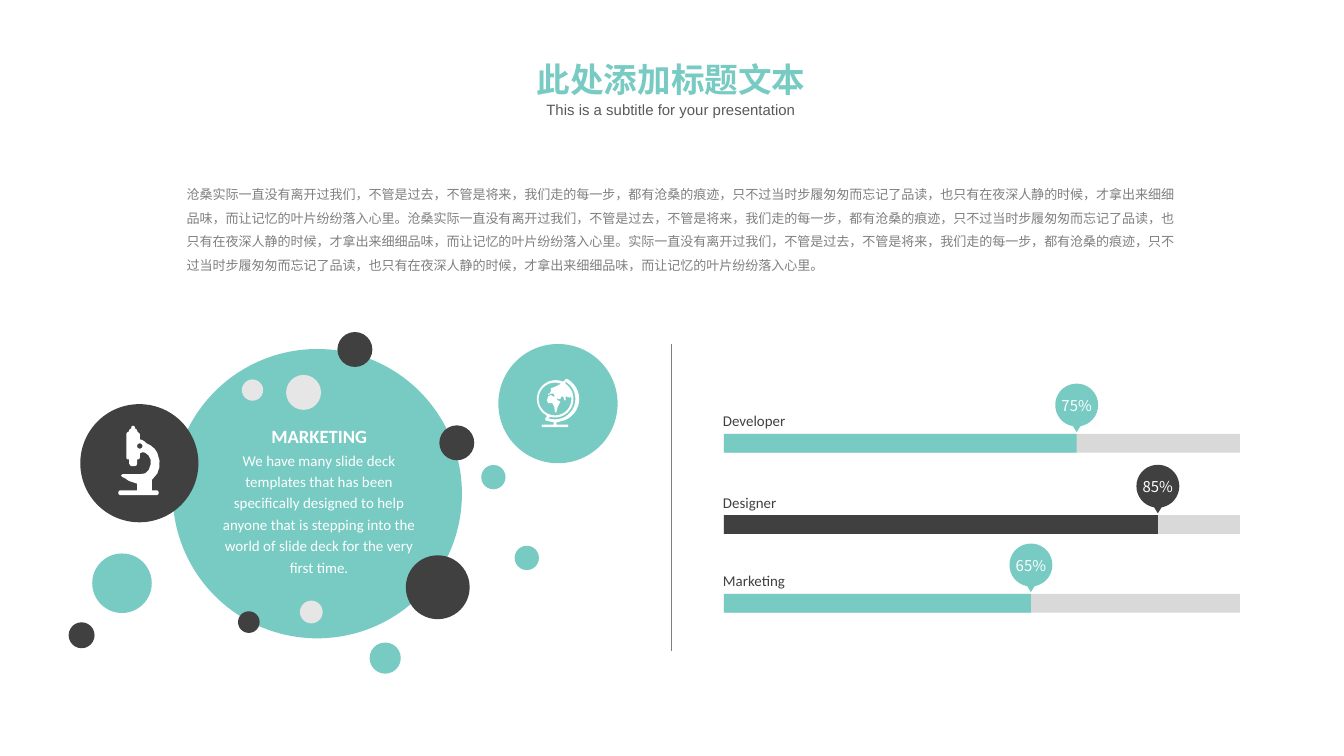
from math import cos, radians, sin

from pptx import Presentation
from pptx.dml.color import RGBColor
from pptx.enum.shapes import MSO_CONNECTOR, MSO_SHAPE
from pptx.enum.text import MSO_ANCHOR, MSO_AUTO_SIZE, PP_ALIGN
from pptx.oxml.ns import qn
from pptx.util import Pt

TEAL, DARK, PALE, TRACK, WHITE, GRAY = "77CBC3", "404040", "E7E6E6", "D9D9D9", "FFFFFF", "808080"
CJK, LATIN = "Noto Sans CJK SC", "Calibri"
ICON_UNIT = 0.72  # icons are drawn on a grid of 1/100 inch

SENTENCE = (
    "实际一直没有离开过我们，不管是过去，不管是将来，我们走的每一步，都有沧桑的痕迹，"
    "只不过当时步履匆匆而忘记了品读，也只有在夜深人静的时候，才拿出来细细品味，"
    "而让记忆的叶片纷纷落入心里。"
)
INTRO = f"沧桑{SENTENCE}沧桑{SENTENCE}{SENTENCE}"
PITCH = (
    "We have many slide deck templates that has been specifically designed to help "
    "anyone that is stepping into the world of slide deck for the very first time."
)

# left, top, diameter, colour, relative to the cluster
BUBBLES = [
    (56.5, 11, 155, TEAL), (117.3, 24.9, 18.7, PALE), (144.8, 1.9, 18.7, DARK),
    (93.6, 27.3, 11.4, PALE), (199.4, 51.9, 18.7, DARK), (221.8, 73.1, 13, TEAL),
    (239.7, 116.4, 13, TEAL), (181.4, 121.5, 34.2, DARK), (91.5, 151.5, 11.6, DARK),
    (124.7, 145.8, 12.2, PALE), (162, 168.2, 16.7, TEAL), (13.4, 120.5, 31.9, TEAL),
    (0.8, 157.4, 13.9, DARK), (7, 40.5, 63.3, DARK), (231, 8.3, 63.9, TEAL),
]


def arc(x, y, radius, start, end, step=10):
    """Points on a circle; degrees run clockwise from the right."""
    angles = range(start, end + (1 if step > 0 else -1), step)
    return [(x + radius * cos(radians(a)), y + radius * sin(radians(a))) for a in angles]


MICROSCOPE = [
    [(29, 48), (25, 48), (25, 40), (26, 39), (29, 35.5), (30.5, 31), (30.7, 26), (29, 20),
     (27, 17), (24, 14.5), (21, 13), (20, 12), (18, 10.6), (16, 10), (16, 6), (15, 5), (14, 4),
     (14, 3), (12.5, 2), (12, 0), (10, 0), (9.5, 2), (8, 3), (8, 4), (6.5, 5), (6, 6), (6, 24),
     (7, 25), (8, 25), (8, 28), (9, 29.5), (10, 30), (12, 30), (13.5, 29.5), (14, 28), (14, 25),
     (15, 25), (16, 24), (16, 20.5), (18, 19.6), (20, 20), (22.5, 22), (24, 25), (24, 29),
     (22.5, 33), (20, 35.3), (16, 36), (3, 36), (2, 37), (3, 38), (5, 39), (8, 41), (14, 43),
     (14, 48), (1, 48), (0, 49), (0, 50.5), (1, 51.5), (29, 51.5), (30, 50.5), (30, 49)],
    arc(16, 15, 2, 0, 340, 20),
]
GLOBE = [
    [(19, 2), (20, 1.5), (21, 0)] + arc(14, 15, 17, -60, 80)
    + [(14, 32.5), (14, 34), (22.5, 34), (23, 35), (22.5, 36), (3.5, 36), (3, 35), (3.5, 34),
       (12, 34), (12, 32.3), (6, 31), (5.7, 29.5), (7, 28)] + arc(13.5, 15, 14, 120, 290),
    arc(13, 15, 13.8, -55, 105) + arc(13, 15, 15.2, 110, -60, -10),
    arc(13, 15, 12.2, 0, 350),
    [(17, 4), (13, 6), (10, 7), (10, 9), (9, 11), (8, 11), (8, 12), (10, 11), (12, 11), (13, 13),
     (11, 13), (10, 12), (8, 13), (7, 16), (8, 18), (11, 18), (12.5, 21), (13, 25), (14, 25),
     (15, 21), (17, 17), (15, 16), (14, 14), (15.5, 15), (17, 15), (17.5, 13.5), (19, 13),
     (20, 16), (21, 16), (21, 13), (24, 14)] + arc(13, 15, 12.2, -10, -70, -10),
]


def rgb(value):
    return RGBColor.from_string(value)


def paint(shape, color):
    shape.fill.solid()
    shape.fill.fore_color.rgb = rgb(color)
    shape.line.fill.background()
    shape.shadow.inherit = False


def add_solid(page, kind, left, top, width, height, color):
    paint(page.shapes.add_shape(kind, Pt(left), Pt(top), Pt(width), Pt(height)), color)


def add_outline(page, left, top, contours, color, unit=1):
    """One filled freeform; inner contours cut holes."""
    scaled = [[(Pt(left + x * unit), Pt(top + y * unit)) for x, y in points]
              for points in contours]
    builder = page.shapes.build_freeform(*scaled[0][0], scale=1.0)
    for number, points in enumerate(scaled):
        if number:
            builder.move_to(*points[0])
        builder.add_line_segments(points[1:], close=True)
    paint(builder.convert_to_shape(), color)


def style(para, size, color, font, bold=False, align=PP_ALIGN.LEFT, spacing=None):
    para.alignment = align
    para.line_spacing = spacing
    para.font.size = Pt(size)
    para.font.bold = bold
    para.font.name = font
    para.font.color.rgb = rgb(color)
    if font == CJK:
        defaults = para._p.get_or_add_pPr().find(qn("a:defRPr"))
        latin = defaults.find(qn("a:latin"))
        east = latin.makeelement(qn("a:ea"), {"typeface": font})
        latin.addnext(east)


def add_text(page, left, top, width, height, lines, wrap=True, anchor=MSO_ANCHOR.TOP):
    """Text box without insets; lines are (text, style) pairs."""
    box = page.shapes.add_textbox(Pt(left), Pt(top), Pt(width), Pt(height))
    frame = box.text_frame
    frame.margin_left = frame.margin_right = frame.margin_top = frame.margin_bottom = 0
    frame.word_wrap = wrap
    frame.vertical_anchor = anchor
    for number, (text, look) in enumerate(lines):
        para = frame.add_paragraph() if number else frame.paragraphs[0]
        para.text = text
        style(para, **look)


def add_heading(page, left, top, width):
    title = page.shapes.title
    title.left, title.top, title.width, title.height = Pt(left), Pt(top), Pt(width), Pt(29)
    frame = title.text_frame
    frame.text = "此处添加标题文本"
    frame.auto_size = MSO_AUTO_SIZE.NONE
    frame.vertical_anchor = MSO_ANCHOR.TOP
    style(frame.paragraphs[0], 18, TEAL, CJK, bold=True, align=PP_ALIGN.CENTER)
    look = dict(size=8, color="595959", font="Arial", align=PP_ALIGN.CENTER)
    add_text(page, left, top + 26, width, 9.4, [("This is a subtitle for your presentation", look)])


def add_bubble_cluster(page, left, top):
    for x, y, diameter, color in BUBBLES:
        add_solid(page, MSO_SHAPE.OVAL, left + x, top + y, diameter, diameter, color)
    add_outline(page, left + 27.4, top + 52.2, MICROSCOPE, WHITE, ICON_UNIT)
    add_outline(page, left + 252, top + 27, GLOBE, WHITE, ICON_UNIT)
    look = dict(color=WHITE, font=LATIN, align=PP_ALIGN.CENTER, spacing=1.2)
    add_text(page, left + 78.5, top + 49.4, 113, 83.5, [
        ("MARKETING", dict(look, size=10, bold=True)),
        (PITCH, dict(look, size=8)),
    ])


def add_skill_bar(page, left, top, width, name, percent, filled, color):
    """Bar with its name above and a pin whose tip marks the filled end."""
    add_solid(page, MSO_SHAPE.RECTANGLE, left, top, width, 10, TRACK)
    add_solid(page, MSO_SHAPE.RECTANGLE, left, top, filled, 10, color)
    add_text(page, left - 0.5, top - 11.8, 50, 10,
             [(name, dict(size=8, color=DARK, font=LATIN))], wrap=False)
    radius = 11.5
    pin_left, pin_top = left + filled - radius, top - 27
    pin = arc(radius, radius, radius, 100, 440) + [(radius, 26)]
    add_outline(page, pin_left, pin_top, [pin], color)
    look = dict(size=8, color=WHITE, font=CJK, align=PP_ALIGN.CENTER)
    add_text(page, pin_left, pin_top, 2 * radius, 2 * radius, [(percent, look)],
             anchor=MSO_ANCHOR.MIDDLE)


def add_divider(page, x, top, bottom):
    line = page.shapes.add_connector(MSO_CONNECTOR.STRAIGHT, Pt(x), Pt(top), Pt(x), Pt(bottom))
    line.line.color.rgb = rgb(GRAY)
    line.line.width = Pt(0.5)
    properties = line._element.spPr
    properties.append(properties.makeelement(qn("a:effectLst"), {}))


def main():
    deck = Presentation()
    deck.slide_width, deck.slide_height = Pt(720), Pt(405)
    page = deck.slides.add_slide(deck.slide_layouts[5])
    add_heading(page, 272, 28, 175)
    add_text(page, 100, 95.8, 529.2, 63.4,
             [(INTRO, dict(size=7, color=GRAY, font=CJK, spacing=1.5))])
    add_bubble_cluster(page, 36, 176)
    add_divider(page, 359.5, 184.5, 349)
    for top, name, percent, filled, color in [
        (232.5, "Developer", "75%", 189, TEAL),
        (276, "Designer", "85%", 232.5, DARK),
        (318.2, "Marketing", "65%", 164.5, TEAL),
    ]:
        add_skill_bar(page, 387.8, top, 276.5, name, percent, filled, color)
    deck.save("out.pptx")


if __name__ == "__main__":
    main()
